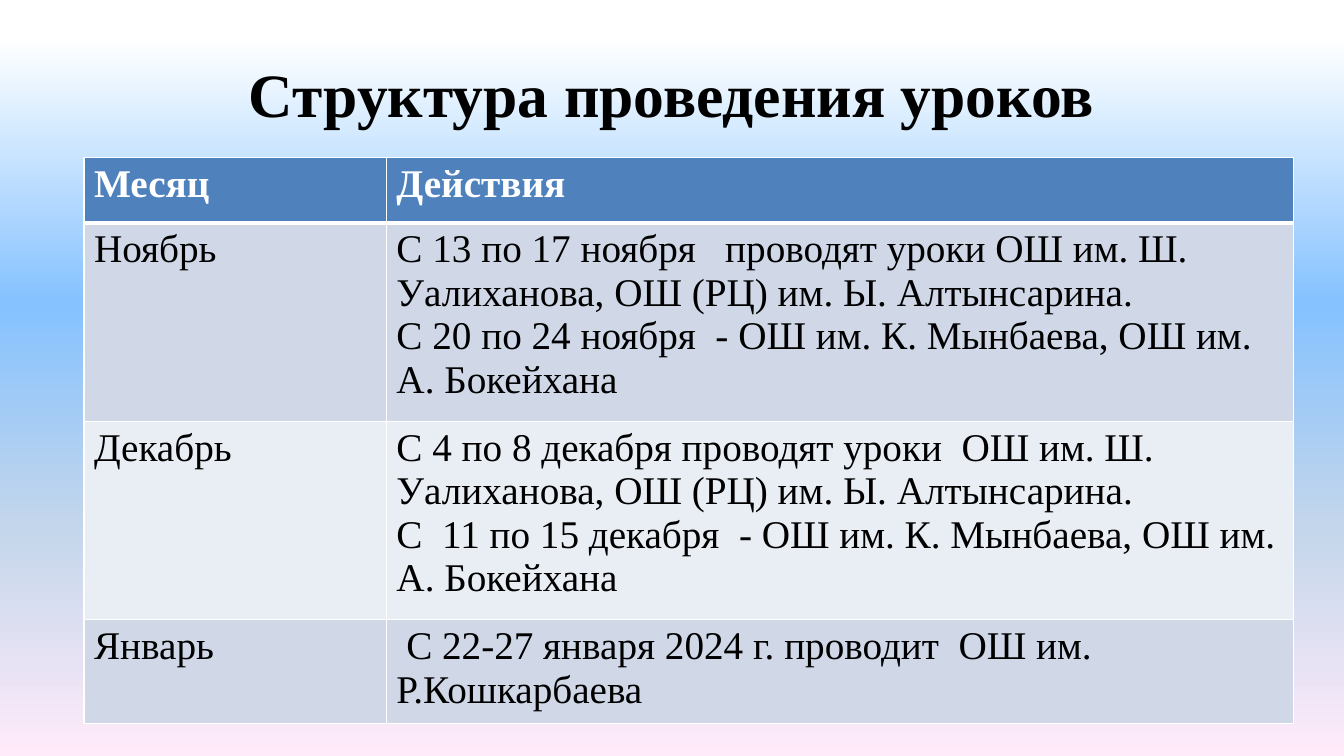
from lxml.etree import SubElement
from pptx import Presentation
from pptx.dml.color import RGBColor as RGB
from pptx.enum.text import MSO_ANCHOR as ANCHOR, PP_ALIGN as ALIGN
from pptx.oxml.ns import qn
from pptx.util import Pt

TITLE = "Структура проведения уроков"
ROWS = [
    ("Месяц", ["Действия"]),
    ("Ноябрь", [
        "С 13 по 17 ноября   проводят уроки ОШ им. Ш. Уалиханова, ОШ (РЦ) им. Ы. Алтынсарина.",
        "С 20 по 24 ноября  - ОШ им. К. Мынбаева, ОШ им. А. Бокейхана",
    ]),
    ("Декабрь", [
        "С 4 по 8 декабря проводят уроки  ОШ им. Ш. Уалиханова, ОШ (РЦ) им. Ы. Алтынсарина.",
        "С  11 по 15 декабря  - ОШ им. К. Мынбаева, ОШ им. А. Бокейхана",
    ]),
    ("Январь", [" С 22-27 января 2024 г. проводит  ОШ им. Р.Кошкарбаева"]),
]
COLUMN_WIDTHS = [216, 648]
ROW_HEIGHTS = [46.8, 131, 131, 69.5]
FONT = "Times New Roman"
COLORS = {
    "text": "000000", "header_text": "FFFFFF", "border": "FFFFFF",
    "header": "4F81BD", "odd": "D0D8E8", "even": "E9EDF4",
}
BACKGROUND_STOPS = [(5, "FFFFFF"), (40, "85C2FF"), (70, "C4D6EB"), (100, "FFEBFA")]


def add_text(p, text, size, color, bold):
    r = p.add_run()
    r.text = text
    r.font.name = FONT
    r.font.size = Pt(size)
    r.font.bold = bold
    r.font.color.rgb = RGB.from_string(color)


def set_background(s):
    fill = s.background.fill
    fill.gradient()
    fill.gradient_angle = 270
    stops = next(s.element.iter(qn("a:gsLst")))
    for old in list(stops):
        stops.remove(old)
    for percent, color in BACKGROUND_STOPS:
        stop = SubElement(stops, qn("a:gs"), pos=str(percent * 1000))
        SubElement(stop, qn("a:srgbClr"), val=color)


def set_borders(cell, widths):
    """Draw the cell's edges; widths holds points for left, right, top, bottom."""
    tc_pr = cell._tc.get_or_add_tcPr()
    for side, width in zip("LRTB", widths):
        line = SubElement(tc_pr, qn(f"a:ln{side}"), w=str(Pt(width)))
        fill = SubElement(line, qn("a:solidFill"))
        SubElement(fill, qn("a:srgbClr"), val=COLORS["border"])


def fill_cell(cell, lines, row):
    header = row == 0
    set_borders(cell, (1, 1, 3 if row == 1 else 1, 3 if header else 1))
    cell.fill.solid()
    band = "header" if header else "odd" if row % 2 else "even"
    cell.fill.fore_color.rgb = RGB.from_string(COLORS[band])
    tf = cell.text_frame
    for i, text in enumerate(lines):
        p = tf.add_paragraph() if i else tf.paragraphs[0]
        add_text(p, text, 28, COLORS["header_text" if header else "text"], header)


prs = Presentation()
prs.slide_width, prs.slide_height = Pt(960), Pt(540)
s = prs.slides.add_slide(prs.slide_layouts[6])
set_background(s)

tf = s.shapes.add_textbox(Pt(48), Pt(21.6), Pt(864), Pt(90)).text_frame
tf.word_wrap = True
tf.vertical_anchor = ANCHOR.MIDDLE
tf.paragraphs[0].alignment = ALIGN.CENTER
add_text(tf.paragraphs[0], TITLE, 44, COLORS["text"], True)

table = s.shapes.add_table(
    len(ROWS), len(COLUMN_WIDTHS), Pt(60), Pt(112.4),
    Pt(sum(COLUMN_WIDTHS)), Pt(sum(ROW_HEIGHTS))).table
for column, width in zip(table.columns, COLUMN_WIDTHS):
    column.width = Pt(width)
for i, (month, actions) in enumerate(ROWS):
    table.rows[i].height = Pt(ROW_HEIGHTS[i])
    fill_cell(table.cell(i, 0), [month], i)
    fill_cell(table.cell(i, 1), actions, i)

prs.save("out.pptx")
